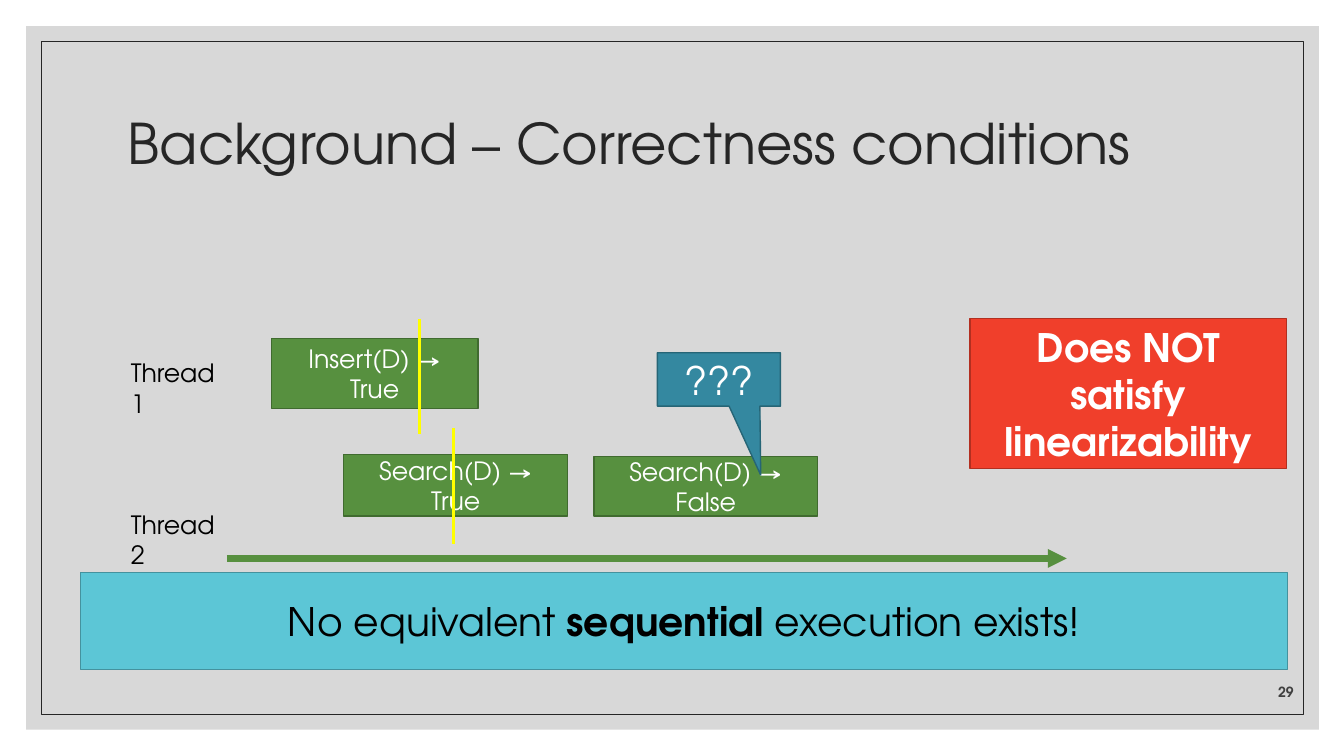
from lxml.etree import SubElement
from pptx import Presentation
from pptx.dml.color import RGBColor
from pptx.enum.shapes import MSO_CONNECTOR, MSO_SHAPE
from pptx.enum.text import MSO_ANCHOR, PP_ALIGN
from pptx.oxml.ns import qn
from pptx.util import Inches, Pt

FONT = "TeX Gyre Adventor"
BLACK = RGBColor(0x00, 0x00, 0x00)
WHITE = RGBColor(0xFF, 0xFF, 0xFF)
DARK = RGBColor(0x26, 0x26, 0x26)
SLATE = RGBColor(0x40, 0x40, 0x40)
GRAY = RGBColor(0xBF, 0xBF, 0xBF)
GREEN = RGBColor(0x57, 0x90, 0x3F)
MOSS = RGBColor(0x40, 0x6B, 0x2F)
RED = RGBColor(0xF0, 0x3F, 0x2B)
BRICK = RGBColor(0xB2, 0x2F, 0x20)
YELLOW = RGBColor(0xFF, 0xFF, 0x00)
BLUE = RGBColor(0x34, 0x88, 0xA0)
NAVY = RGBColor(0x26, 0x65, 0x76)
CYAN = RGBColor(0x5C, 0xC6, 0xD6)
TEAL = RGBColor(0x44, 0x92, 0x9E)


def write(frame, runs, size, color, align=PP_ALIGN.CENTER, anchor=MSO_ANCHOR.MIDDLE):
    frame.word_wrap = True
    frame.vertical_anchor = anchor
    para = frame.paragraphs[0]
    para.alignment = align
    for text, bold in runs:
        run = para.add_run()
        run.text = text
        run.font.color.rgb = color
        style = {"name": FONT, "size": Pt(size), "bold": bold}
        for key, value in style.items():
            setattr(run.font, key, value)
    return para


def add_label(slide, box, text, size, color, bold=False, **place):
    label = slide.shapes.add_textbox(*map(Inches, box))
    return write(label.text_frame, [(text, bold)], size, color, **place)


def add_block(slide, box, fill=None, line=None, width=1, kind=MSO_SHAPE.RECTANGLE):
    block = slide.shapes.add_shape(kind, *map(Inches, box))
    block.shadow.inherit = False
    if fill is None:
        block.fill.background()
    else:
        block.fill.solid()
        block.fill.fore_color.rgb = fill
    if line is None:
        block.line.fill.background()
    else:
        block.line.color.rgb = line
        block.line.width = Pt(width)
    return block


def add_line(slide, ends, color, width, arrow=False):
    line = slide.shapes.add_connector(MSO_CONNECTOR.STRAIGHT, *map(Inches, ends))
    line.line.color.rgb = color
    line.line.width = Pt(width)
    props = line._element.spPr
    if arrow:
        SubElement(props.find(qn("a:ln")), qn("a:tailEnd"), type="triangle")
    SubElement(props, qn("a:effectLst"))


def add_frame(slide):
    panel = add_block(slide, (0.26, 0.26, 12.82, 6.98), GRAY)
    tint = panel._element.spPr.find(qn("a:solidFill"))[0]
    SubElement(tint, qn("a:alpha"), val="60000")
    add_block(slide, (0.41, 0.41, 12.52, 6.68), line=DARK, width=0.5)


def main():
    deck = Presentation()
    deck.slide_width = Inches(13.33)
    deck.slide_height = Inches(7.5)
    slide = deck.slides.add_slide(deck.slide_layouts[6])

    add_frame(slide)
    title = add_label(slide, (1.17, 0.7, 11, 1.5), "Background – Correctness conditions",
                      40, DARK, align=PP_ALIGN.LEFT)
    title.line_spacing = 0.9
    add_label(slide, (12.01, 6.6, 0.92, 0.4), "29", 10, SLATE, True,
              align=PP_ALIGN.RIGHT, anchor=MSO_ANCHOR.BOTTOM)

    for top, text in ((3.5, "Thread 1"), (5, "Thread 2")):
        add_label(slide, (1.2, top, 1.11, 0.7), text, 18, BLACK,
                  align=PP_ALIGN.LEFT, anchor=MSO_ANCHOR.TOP)
    add_line(slide, (2.25, 5.54, 10.58, 5.54), GREEN, 4.5, True)

    calls = (
        ((2.69, 3.36, 2.05, 0.69), "Insert(D) → True"),
        ((3.41, 4.51, 2.22, 0.61), "Search(D) → True"),
        ((5.89, 4.53, 2.22, 0.59), "Search(D) → False"),
    )
    for box, text in calls:
        call = add_block(slide, box, GREEN, MOSS)
        write(call.text_frame, [(text, False)], 18, WHITE)

    claim = add_block(slide, (9.62, 3.16, 3.14, 1.49), RED, BRICK)
    write(claim.text_frame, [("Does NOT satisfy linearizability", True)], 28, WHITE)

    for left, top in ((4.16, 3.16), (4.5, 4.25)):
        add_line(slide, (left, top, left, top + 1.15), YELLOW, 2.25)

    doubt = add_block(slide, (6.52, 3.5, 1.22, 0.53), BLUE, NAVY,
                      kind=MSO_SHAPE.RECTANGULAR_CALLOUT)
    doubt.adjustments[0] = 0.34
    doubt.adjustments[1] = 1.79
    write(doubt.text_frame, [("???", False)], 28, WHITE)

    banner = add_block(slide, (0.8, 5.68, 11.97, 0.96), CYAN, TEAL)
    words = [("No equivalent ", False), ("sequential", True), (" execution exists!", False)]
    write(banner.text_frame, words, 28, BLACK)

    deck.save("out.pptx")


if __name__ == "__main__":
    main()
